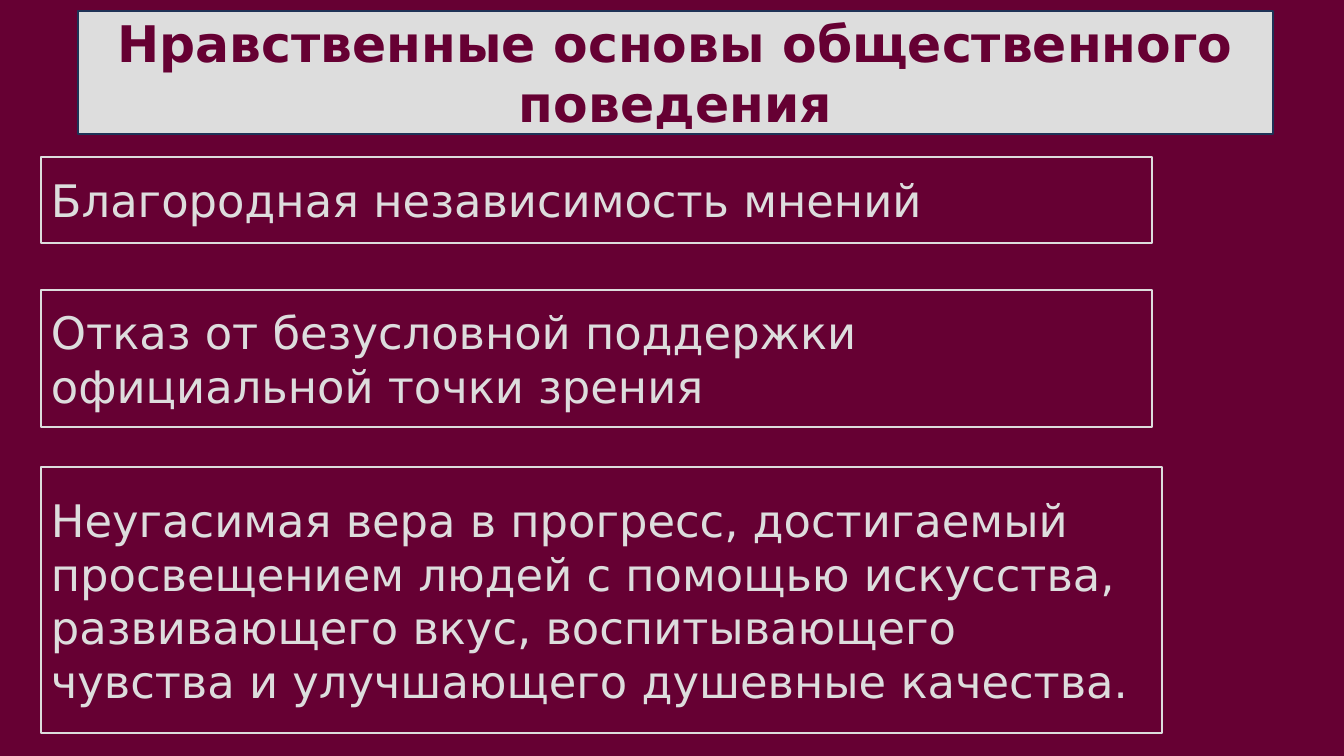
"""Build a slide on the moral foundations of public conduct."""
from pptx import Presentation
from pptx.dml.color import RGBColor
from pptx.enum.shapes import MSO_SHAPE
from pptx.enum.text import MSO_ANCHOR, PP_ALIGN
from pptx.util import Inches, Pt

TITLE = "Нравственные основы общественного поведения"
TITLE_AREA = (78, 11, 1195, 123)
PRINCIPLES = [
    ("Благородная независимость мнений", 157, 1111, 86),
    ("Отказ от безусловной поддержки официальной точки зрения", 290, 1111, 137),
    ("Неугасимая вера в прогресс, достигаемый просвещением людей с помощью "
     "искусства, развивающего вкус, воспитывающего чувства и улучшающего "
     "душевные качества.", 467, 1121, 266),
]
PRINCIPLE_LEFT = 41
PAGE_WIDTH, PAGE_HEIGHT = 1344, 756
SCALE = Inches(7.5) / PAGE_HEIGHT
FONT = "DejaVu Sans"
MAROON = RGBColor(0x66, 0x00, 0x33)
SILVER = RGBColor(0xDD, 0xDD, 0xDD)
NAVY = RGBColor(0x1E, 0x32, 0x56)


def emu(pixels):
    return round(pixels * SCALE)


def add_box(page, text, area, size, color, border, align, fill=None, bold=False):
    box = page.shapes.add_shape(MSO_SHAPE.RECTANGLE, *map(emu, area))
    box.shadow.inherit = False
    if fill is None:
        box.fill.background()
    else:
        box.fill.solid()
        box.fill.fore_color.rgb = fill
    box.line.color.rgb = border
    box.line.width = Pt(1)
    frame = box.text_frame
    frame.word_wrap = True
    frame.vertical_anchor = MSO_ANCHOR.MIDDLE
    para = frame.paragraphs[0]
    para.alignment = align
    span = para.add_run()
    span.text = text
    span.font.name = FONT
    span.font.size = Pt(size)
    span.font.bold = bold
    span.font.color.rgb = color


def main():
    deck = Presentation()
    deck.slide_width, deck.slide_height = emu(PAGE_WIDTH), emu(PAGE_HEIGHT)
    page = deck.slides.add_slide(deck.slide_layouts[6])
    page.background.fill.solid()
    page.background.fill.fore_color.rgb = MAROON
    add_box(page, TITLE, TITLE_AREA, 36, MAROON, NAVY, PP_ALIGN.CENTER, SILVER, True)
    for text, top, width, height in PRINCIPLES:
        area = (PRINCIPLE_LEFT, top, width, height)
        add_box(page, text, area, 32, SILVER, SILVER, PP_ALIGN.LEFT)
    deck.save("out.pptx")


if __name__ == "__main__":
    main()
